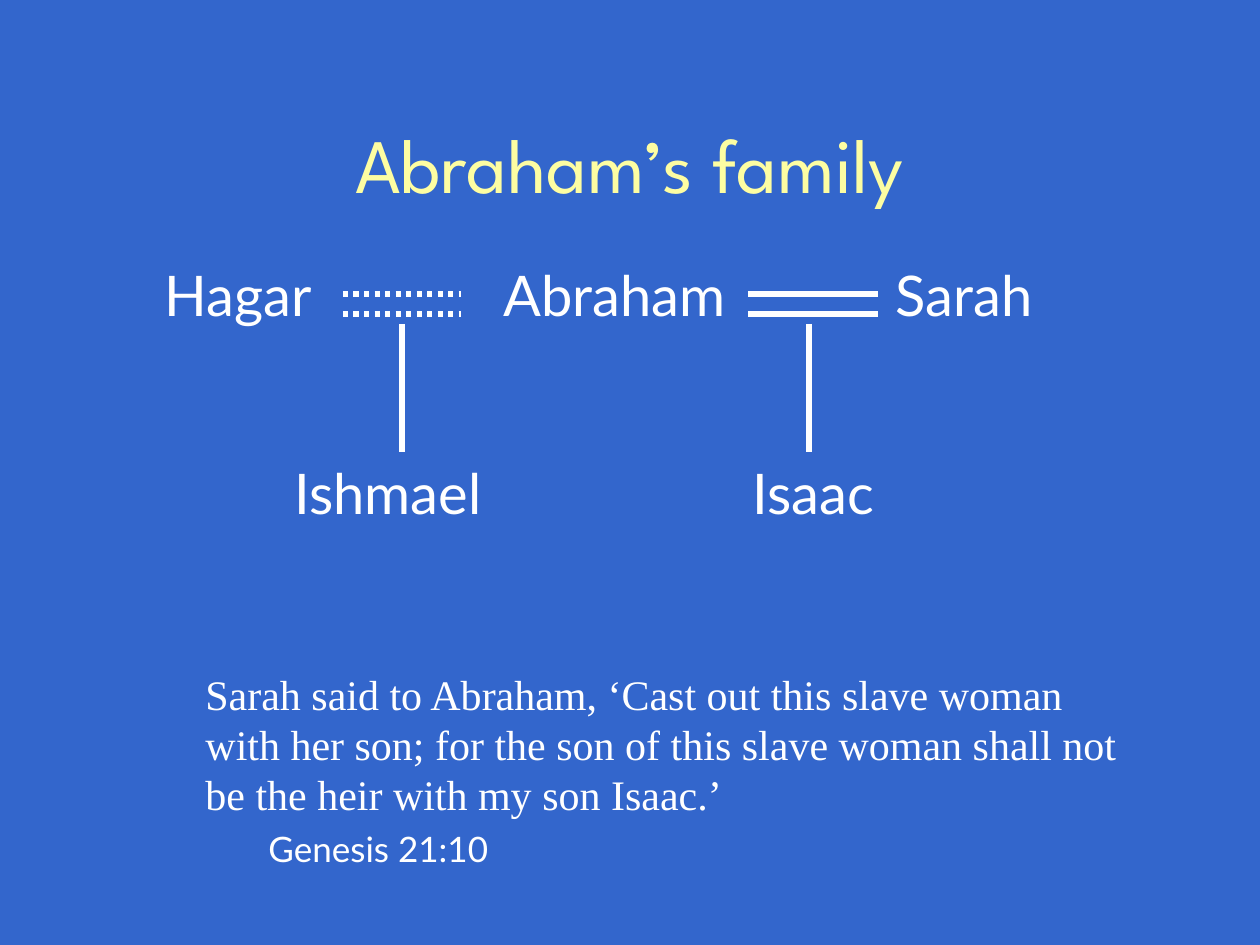
"""Build the slide showing Abraham's family tree with a verse from Genesis."""
import pptx
import pptx.dml.color
import pptx.enum.dml
import pptx.enum.shapes
import pptx.enum.text
import pptx.oxml
import pptx.util

PX = 914400 / 126
ALIGN = pptx.enum.text.PP_ALIGN
THEME = {
    "background": pptx.dml.color.RGBColor.from_string("3366CC"),
    "ink": pptx.dml.color.RGBColor.from_string("FFFFFF"),
    "title": pptx.dml.color.RGBColor.from_string("FDFDA2"),
    "title_font": "League Spartan",
    "name_font": "Lato",
    "verse_font": "Times New Roman",
    "title_size": 44,
    "name_size": 32,
    "verse_size": 24,
    "source_size": 20,
    "line_width": 3,
}


def px(*lengths):
    return [pptx.util.Emu(round(length * PX)) for length in lengths]


def add_run(paragraph, text, font, size, color):
    run = paragraph.add_run()
    run.text = text
    run.font.name = font
    run.font.size = pptx.util.Pt(size)
    run.font.color.rgb = color


presentation = pptx.Presentation()
presentation.slide_width, presentation.slide_height = px(1260, 945)
slide = presentation.slides.add_slide(presentation.slide_layouts[5])
slide.background.fill.solid()
slide.background.fill.fore_color.rgb = THEME["background"]

title = slide.shapes.title
title.left, title.top, title.width, title.height = px(94, 84, 1072, 158)
title.text_frame.vertical_anchor = pptx.enum.text.MSO_ANCHOR.MIDDLE
heading = title.text_frame.paragraphs[0]
heading.alignment = ALIGN.CENTER
add_run(heading, "Abraham’s family", THEME["title_font"], THEME["title_size"], THEME["title"])

PARENTS_TOP, CHILDREN_TOP, NAME_HEIGHT = 254, 452, 80
people = {}
for name, left, top, width, alignment, wrap in (
    ("Abraham", 481, PARENTS_TOP, 267, ALIGN.CENTER, True),
    ("Hagar", 123, PARENTS_TOP, 231, ALIGN.CENTER, True),
    ("Sarah", 858, PARENTS_TOP, 212, ALIGN.CENTER, True),
    ("Ishmael", 282, CHILDREN_TOP, 240, ALIGN.LEFT, True),
    ("Isaac", 740, CHILDREN_TOP, 156, ALIGN.LEFT, False),
):
    person = slide.shapes.add_textbox(*px(left, top, width, NAME_HEIGHT))
    person.text_frame.word_wrap = wrap
    person.text_frame.auto_size = pptx.enum.text.MSO_AUTO_SIZE.SHAPE_TO_FIT_TEXT
    label = person.text_frame.paragraphs[0]
    label.alignment = alignment
    add_run(label, name, THEME["name_font"], THEME["name_size"], THEME["ink"])
    people[name] = person

UPPER, LOWER, DESCENT_TOP = 294, 314, 324
DOTTED = pptx.enum.dml.MSO_LINE.ROUND_DOT
for start_x, start_y, end_x, end_y, dash, begin_person, end_person in (
    (343, UPPER, 461, UPPER, DOTTED, None, None),
    (343, LOWER, 461, LOWER, DOTTED, None, None),
    (748, UPPER, 878, UPPER, None, "Abraham", None),
    (748, LOWER, 878, LOWER, None, None, None),
    (402, DESCENT_TOP, 402, CHILDREN_TOP, None, None, "Ishmael"),
    (809, DESCENT_TOP, 809, CHILDREN_TOP, None, None, None),
):
    bond = slide.shapes.add_connector(
        pptx.enum.shapes.MSO_CONNECTOR.STRAIGHT, *px(start_x, start_y, end_x, end_y)
    )
    bond.line.color.rgb = THEME["ink"]
    bond.line.width = pptx.util.Pt(THEME["line_width"])
    if dash:
        bond.line.dash_style = dash
    if begin_person:
        bond.begin_connect(people[begin_person], 3)
    if end_person:
        bond.end_connect(people[end_person], 0)
    bond._element.spPr.append(pptx.oxml.parse_xml(
        '<a:effectLst xmlns:a="http://schemas.openxmlformats.org/drawingml/2006/main"/>'
    ))

verse = slide.shapes.add_textbox(*px(193, 662, 953, 217))
verse.text_frame.word_wrap = True
verse.text_frame.auto_size = pptx.enum.text.MSO_AUTO_SIZE.SHAPE_TO_FIT_TEXT
quotation = verse.text_frame.paragraphs[0]
quotation.alignment = ALIGN.LEFT
quotation.line_spacing = pptx.util.Pt(28.8)
add_run(
    quotation,
    "Sarah said to Abraham, ‘Cast out this slave woman with her son; "
    "for the son of this slave woman shall not be the heir with my son Isaac.’",
    THEME["verse_font"], THEME["verse_size"], THEME["ink"],
)
quotation.add_line_break()
add_run(quotation, "\tGenesis 21:10", THEME["name_font"], THEME["source_size"], THEME["ink"])

presentation.save("out.pptx")
